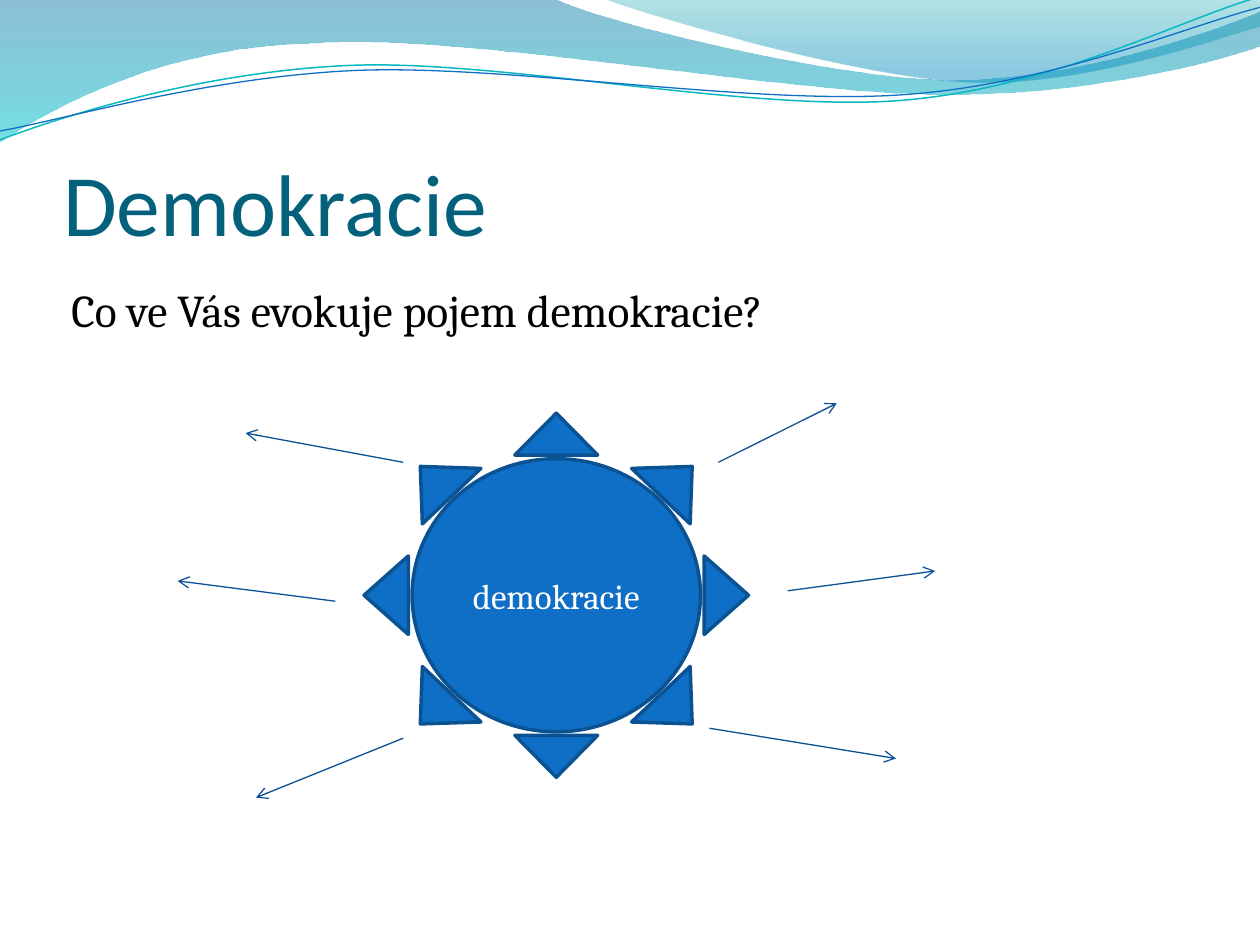
from lxml.etree import SubElement
from pptx import Presentation
from pptx.dml.color import RGBColor
from pptx.enum.shapes import MSO_CONNECTOR, MSO_SHAPE
from pptx.enum.text import MSO_ANCHOR, MSO_AUTO_SIZE, PP_ALIGN
from pptx.oxml.ns import qn
from pptx.util import Cm, Pt

COLORS = {
    "title": "04617B", "text": "000000", "on_sun": "FFFFFF",
    "sun": "0F6FC6", "sun_edge": "0B5292", "arrow": "095295",
    "teal_line": "0AB8BF", "blue_line": "0F6FC6",
    "wave_top": "0074A1", "wave_bottom": "00C6CF",
    "crest_top": "00A1A9", "crest_bottom": "008BBF",
}

# Outlines in cm: a pair is a straight step, a triple of pairs a Bezier curve
WAVE = [
    (0, 0), (11.18, -0.03),
    ((12.09, 0.43), (16.87, 1.6), (19.25, 1.6)),
    ((21.67, 1.6), (24.33, 0.66), (25.4, 0.23)),
    (25.43, 0.91),
    ((24.97, 1.12), (22.1, 1.93), (18.95, 1.9)),
    ((15.8, 1.9), (9.7, 0.71), (6.53, 0.86)),
    ((3.28, 0.91), (1.17, 2.11), (-0.03, 2.87)),
]
CREST = [
    (12.17, -0.03),
    ((12.93, 0.28), (17.32, 1.57), (19.53, 1.65)),
    ((21.74, 1.75), (24.41, 0.81), (25.4, 0.53)),
    (25.4, 0),
]
TEAL_LINE = [
    (0, 2.82),
    ((1.22, 2.36), (4.01, 1.45), (7.04, 1.32)),
    ((10.03, 1.19), (15.06, 2.26), (18.11, 2.03)),
    ((21.16, 1.8), (23.83, 0.38), (25.35, -0.05)),
]
BLUE_LINE = [
    (0, 2.64),
    ((1.19, 2.44), (4.17, 1.55), (7.19, 1.42)),
    ((10.24, 1.3), (15.16, 2.13), (18.21, 1.91)),
    ((21.23, 1.7), (23.9, 0.53), (25.4, 0.15)),
]

# Arrows in cm: start and tip
ARROWS = [
    ((14.48, 9.32), (16.87, 8.13)),
    ((15.88, 11.91), (18.85, 11.51)),
    ((14.3, 14.68), (18.06, 15.29)),
    ((8.13, 9.32), (4.95, 8.73)),
    ((6.76, 12.12), (3.58, 11.71)),
    ((8.13, 14.88), (5.16, 16.08)),
]


def rgb(name):
    return RGBColor.from_string(COLORS[name])


def is_curve(step):
    return len(step) == 3


def bend(shape, steps):
    """Merge the three segments of each curved step into one Bezier curve."""
    segments = iter(list(shape._element.spPr.iter(qn("a:lnTo"))))
    for step in steps:
        first = next(segments)
        if not is_curve(step):
            continue
        first.tag = qn("a:cubicBezTo")
        for _ in range(2):
            segment = next(segments)
            first.append(segment[0])
            segment.getparent().remove(segment)


def add_outline(slide, outline, close):
    start, *steps = outline
    points = []
    for step in steps:
        points.extend(step if is_curve(step) else [step])
    builder = slide.shapes.build_freeform(Cm(start[0]), Cm(start[1]))
    builder.add_line_segments([(Cm(x), Cm(y)) for x, y in points], close=close)
    shape = builder.convert_to_shape()
    bend(shape, steps)
    shape.shadow.inherit = False
    return shape


def add_wave(slide, outline, stops):
    """Stops are (position, colour, opacity in percent), top to bottom."""
    wave = add_outline(slide, outline, close=True)
    wave.line.fill.background()
    wave.fill.gradient()
    wave.fill.gradient_angle = 270
    for stop, (position, color, _) in zip(wave.fill.gradient_stops, stops):
        stop.position = position
        stop.color.rgb = rgb(color)
    stop_colors = wave._element.spPr.iter(qn("a:srgbClr"))
    for stop_color, (_, _, opacity) in zip(stop_colors, stops):
        SubElement(stop_color, qn("a:alpha"), val=str(opacity * 1000))


def add_wave_line(slide, outline, color, width):
    wave_line = add_outline(slide, outline, close=False)
    wave_line.fill.background()
    wave_line.line.color.rgb = rgb(color)
    wave_line.line.width = Pt(width)


def write(frame, text, font, size, color, align=PP_ALIGN.LEFT):
    frame.text = text
    frame.word_wrap = True
    paragraph = frame.paragraphs[0]
    paragraph.alignment = align
    run_font = paragraph.runs[0].font
    run_font.name = font
    run_font.size = Pt(size)
    run_font.color.rgb = rgb(color)


def add_title(slide, text):
    title = slide.shapes.title
    title.left, title.top, title.width, title.height = Cm(1.27), Cm(1.94), Cm(22.86), Cm(3.18)
    frame = title.text_frame
    write(frame, text, "Calibri", 50, "title")
    frame.auto_size = MSO_AUTO_SIZE.NONE
    frame.vertical_anchor = MSO_ANCHOR.BOTTOM
    frame.margin_left = frame.margin_right = frame.margin_bottom = 0
    # Bring the title in front of the waves
    slide.shapes._spTree.append(title._element)


def add_question(slide, text):
    question = slide.shapes.add_textbox(Cm(1.19), Cm(5.56), Cm(22.86), Cm(12.19))
    write(question.text_frame, text, "Cambria", 26, "text")
    question.text_frame.paragraphs[0].space_before = Pt(5.2)


def add_sun(slide, text):
    sun = slide.shapes.add_shape(MSO_SHAPE.SUN, Cm(7.34), Cm(8.33), Cm(7.75), Cm(7.34))
    sun.adjustments[0] = 0.125
    sun.shadow.inherit = False
    sun.fill.solid()
    sun.fill.fore_color.rgb = rgb("sun")
    sun.line.color.rgb = rgb("sun_edge")
    sun.line.width = Pt(2)
    write(sun.text_frame, text, "Cambria", 20, "on_sun", PP_ALIGN.CENTER)
    sun.text_frame.vertical_anchor = MSO_ANCHOR.MIDDLE


def add_arrow(slide, start, tip):
    arrow = slide.shapes.add_connector(
        MSO_CONNECTOR.STRAIGHT, *(Cm(value) for value in (*start, *tip)))
    arrow.line.color.rgb = rgb("arrow")
    arrow.line.width = Pt(0.75)
    SubElement(arrow.line._get_or_add_ln(), qn("a:tailEnd"), type="arrow")
    SubElement(arrow._element.spPr, qn("a:effectLst"))


def main():
    prs = Presentation()
    prs.slide_width, prs.slide_height = Cm(25.4), Cm(19.05)
    slide = prs.slides.add_slide(prs.slide_layouts[5])

    # Wave band along the top
    add_wave(slide, WAVE, [(0, "wave_top", 45), (1, "wave_bottom", 55)])
    add_wave(slide, CREST, [(0, "crest_top", 30), (0.8, "crest_bottom", 45)])
    add_wave_line(slide, TEAL_LINE, "teal_line", 0.85)
    add_wave_line(slide, BLUE_LINE, "blue_line", 0.75)

    # Heading and question
    add_title(slide, "Demokracie")
    add_question(slide, "Co ve Vás evokuje pojem demokracie?")

    # Sun with arrows for the associations
    add_sun(slide, "demokracie")
    for start, tip in ARROWS:
        add_arrow(slide, start, tip)

    prs.save("out.pptx")


if __name__ == "__main__":
    main()
